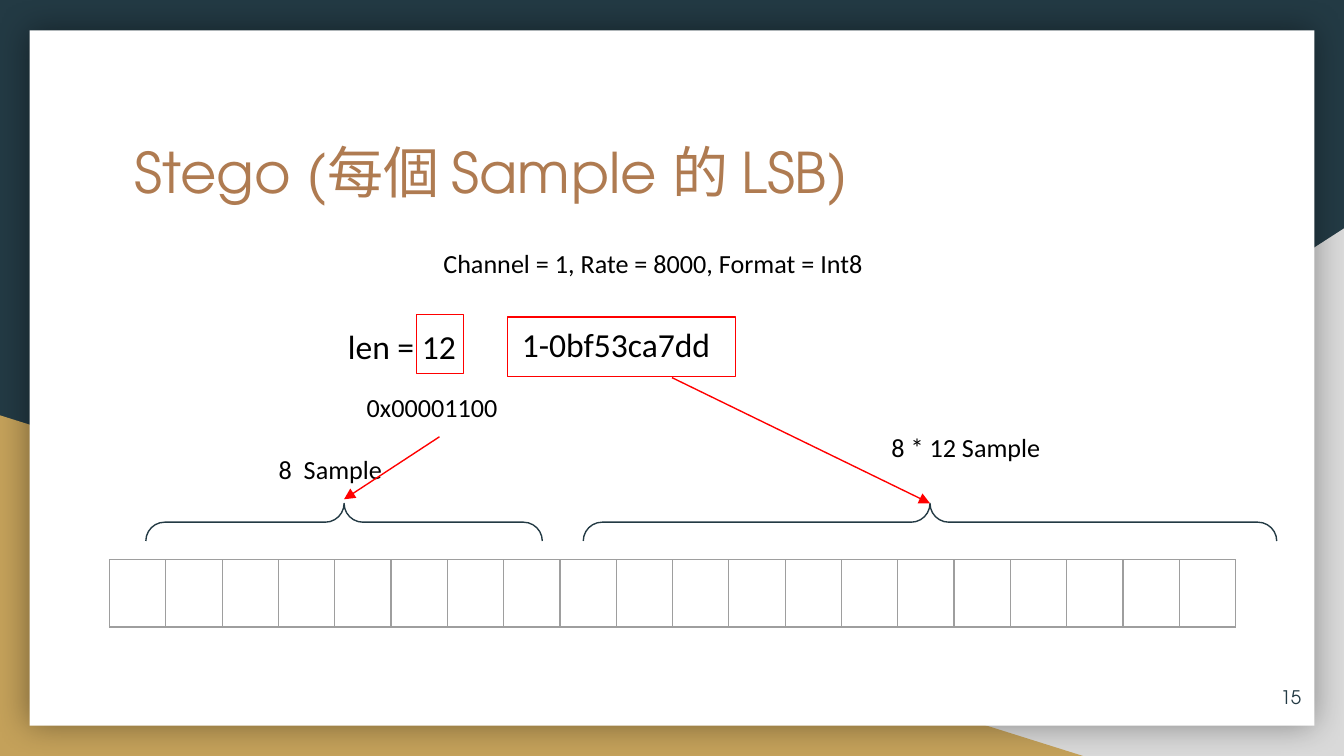
from lxml.etree import SubElement
from pptx import Presentation
from pptx.dml.color import RGBColor
from pptx.enum.shapes import MSO_CONNECTOR, MSO_SHAPE
from pptx.enum.text import MSO_ANCHOR, PP_ALIGN
from pptx.oxml.ns import qn
from pptx.util import Inches, Pt

COLORS = {
    "navy": "233A44", "gold": "C4A15A", "gray": "D9D9D9", "white": "FFFFFF",
    "red": "FF0000", "brown": "AF7B51", "black": "000000", "grid": "9E9E9E",
}
BODY, DISPLAY = "Calibri", "TeX Gyre Adventor"


def color(name):
    return RGBColor.from_string(COLORS[name])


def write(frame, text, size=14, font=BODY, ink="black", align=PP_ALIGN.LEFT,
          anchor=MSO_ANCHOR.TOP):
    frame.word_wrap = True
    frame.vertical_anchor = anchor
    frame.margin_left = frame.margin_right = Inches(0.1)
    frame.margin_top = frame.margin_bottom = Inches(0.1)
    paragraph = frame.paragraphs[0]
    paragraph.alignment = align
    run = paragraph.add_run()
    run.text = text
    run.font.size, run.font.name = Pt(size), font
    run.font.color.rgb = color(ink)


class SlideBuilder:
    """Places elements on a grid of 100 columns, with square cells."""

    def __init__(self, deck, background):
        self.unit = deck.slide_width / 100
        self.slide = deck.slides.add_slide(deck.slide_layouts[6])
        self.shapes = self.slide.shapes
        fill = self.slide.background.fill
        fill.solid()
        fill.fore_color.rgb = color(background)

    def grid(self, *cells):
        return [round(cell * self.unit) for cell in cells]

    def shape(self, kind, *box, fill=None, line=None):
        shape = self.shapes.add_shape(kind, *self.grid(*box))
        shape.shadow.inherit = False
        if fill:
            shape.fill.solid()
            shape.fill.fore_color.rgb = color(fill)
        else:
            shape.fill.background()
        if line:
            shape.line.color.rgb = color(line)
            shape.line.width = Pt(0.75)
        else:
            shape.line.fill.background()
        return shape

    def glow(self, shape):
        effects = shape._element.spPr.find(qn("a:effectLst"))
        shadow = SubElement(effects, qn("a:outerShdw"), blurRad=str(Pt(18)),
                            dist="0", dir="0", algn="ctr", rotWithShape="0")
        shade = SubElement(shadow, qn("a:srgbClr"), val=COLORS["black"])
        SubElement(shade, qn("a:alpha"), val="40000")

    def brace(self, tip_x, tip_y, span, depth=2.8):
        """A brace that opens downward, with its tip at the given point."""
        brace = self.shape(MSO_SHAPE.RIGHT_BRACE, tip_x - depth / 2,
                           tip_y + depth / 2 - span / 2, depth, span, line="navy")
        brace.adjustments[0] = brace.adjustments[1] = 0.5
        brace.rotation = 270

    def text(self, text, *box, **style):
        write(self.shapes.add_textbox(*self.grid(*box)).text_frame, text, **style)

    def arrow(self, *ends):
        arrow = self.shapes.add_connector(MSO_CONNECTOR.STRAIGHT, *self.grid(*ends))
        arrow.line.color.rgb = color("red")
        arrow.line.width = Pt(0.75)
        SubElement(arrow.line._get_or_add_ln(), qn("a:tailEnd"), type="triangle")
        SubElement(arrow._element.spPr, qn("a:effectLst"))

    def cells(self, count, left, top, width, height):
        box = self.grid(left, top, width * count, height)
        table = self.shapes.add_table(1, count, *box).table
        table.first_row = table.horz_banding = False
        for column in table.columns:
            column.width = self.grid(width)[0]
        for cell in table.iter_cells():
            cell.margin_left = cell.margin_right = Inches(0.1)
            cell.margin_top = cell.margin_bottom = Inches(0.1)
            for side in ("lnL", "lnR", "lnT", "lnB"):
                border = SubElement(cell._tc.get_or_add_tcPr(), qn(f"a:{side}"),
                                    w=str(Pt(0.75)))
                paint = SubElement(border, qn("a:solidFill"))
                SubElement(paint, qn("a:srgbClr"), val=COLORS["grid"])
            cell.fill.background()


def main():
    deck = Presentation()
    deck.slide_width = Inches(10)
    deck.slide_height = deck.slide_width * 9 // 16
    page = SlideBuilder(deck, "navy")

    # Backdrop: two corner triangles behind a white sheet
    corner = page.shape(MSO_SHAPE.RIGHT_TRIANGLE, 39.2, 17, 60.8, 39.25, fill="gray")
    corner._element.spPr.find(qn("a:xfrm")).set("flipH", "1")
    page.shape(MSO_SHAPE.RIGHT_TRIANGLE, 0, 30.9, 80.6, 25.35, fill="gold")
    sheet = page.shape(MSO_SHAPE.RECTANGLE, 2.2, 2.25, 95.6, 51.75, fill="white")
    page.glow(sheet)

    # Title and audio format
    page.text("Stego (每個 Sample 的 LSB)", 9, 9.25, 82.1, 10.4,
              size=30, font=DISPLAY, ink="brown")
    page.text("Channel = 1, Rate = 8000, Format = Int8", 32, 17.4, 36.1, 4.4)

    # Length and payload, each value framed in red
    page.shape(MSO_SHAPE.RECTANGLE, 31, 23.4, 3.5, 4.4, line="red")
    page.shape(MSO_SHAPE.RECTANGLE, 37.75, 23.6, 17, 4.4, line="red")
    page.text("len = 12", 24.9, 23.25, 11.8, 5, size=18)
    page.text("1-0bf53ca7dd", 37.85, 23.1, 24.4, 5, size=18)
    page.text("0x00001100", 26.3, 28.15, 12.9, 4.4)

    # Sample cells with the ranges that hold each value
    page.cells(20, 8.15, 41.65, 4.19, 4.2)
    page.brace(25.6, 37.45, 29.5)
    page.brace(69.2, 37.45, 51.6)
    page.text("8  Sample", 19.75, 32.75, 11.8, 4.4)
    page.text("8 * 12 Sample", 65.35, 31.1, 15.3, 4.4)
    page.arrow(32.7, 32.5, 25.6, 37.15)
    page.arrow(50, 28.1, 69.2, 37.45)

    # Page number
    page.text("15", 91.8, 49.75, 6, 4.3, size=10, font=DISPLAY, ink="navy",
              align=PP_ALIGN.RIGHT, anchor=MSO_ANCHOR.MIDDLE)

    deck.save("out.pptx")


if __name__ == "__main__":
    main()
